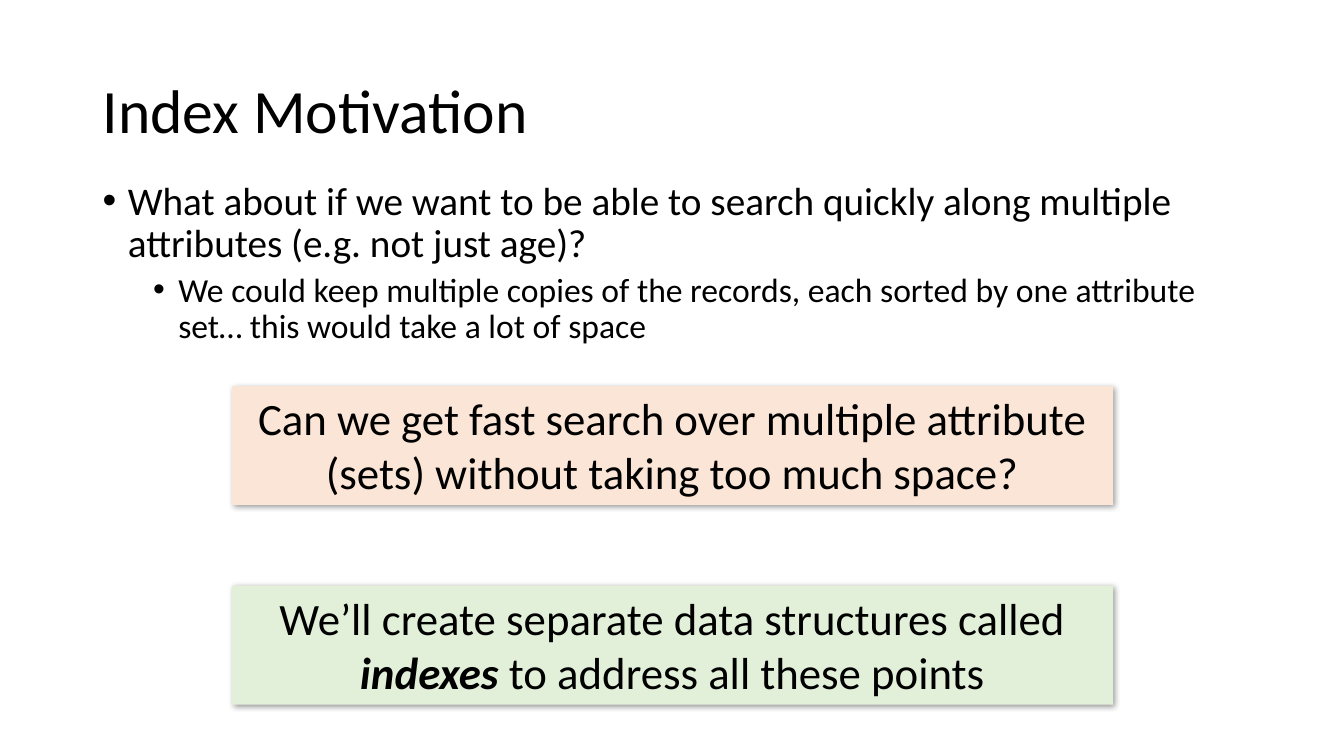
import pptx
import pptx.dml.color
import pptx.enum.shapes
import pptx.enum.text
import pptx.oxml
import pptx.oxml.ns
import pptx.util

Inches = pptx.util.Inches
Pt = pptx.util.Pt
RGBColor = pptx.dml.color.RGBColor
ALIGN = pptx.enum.text.PP_ALIGN
ANCHOR = pptx.enum.text.MSO_ANCHOR
qn = pptx.oxml.ns.qn

BLACK = RGBColor(0x00, 0x00, 0x00)
PEACH = RGBColor(0xFB, 0xE5, 0xD6)
MINT = RGBColor(0xE2, 0xF0, 0xD9)
FONT = "Calibri"

SHADOW_XML = (
    f'<a:outerShdw {pptx.oxml.ns.nsdecls("a")} blurRad="{Pt(4)}" dist="{Pt(1)}" '
    f'dir="{45 * 60000}" algn="tl" rotWithShape="0">'
    '<a:srgbClr val="000000"><a:alpha val="40000"/></a:srgbClr></a:outerShdw>'
)


def write(paragraph, text, size, emphasis=False):
    """Append one run to the paragraph; emphasis means bold italic."""
    run = paragraph.add_run()
    run.text = text
    run.font.name = FONT
    run.font.size = Pt(size)
    run.font.color.rgb = BLACK
    run.font.bold = run.font.italic = emphasis


class LectureSlide:
    LEFT, WIDTH = Inches(0.92), Inches(11.5)
    BOX_LEFT, BOX_WIDTH, BOX_HEIGHT = Inches(2.3), Inches(8.74), Inches(1.18)
    BULLET_STEP, HANGING = Inches(0.5), Inches(0.25)

    def __init__(self, deck):
        self.slide = deck.slides.add_slide(deck.slide_layouts[6])

    def text_frame(self, top, height, anchor):
        box = self.slide.shapes.add_textbox(self.LEFT, top, self.WIDTH, height)
        frame = box.text_frame
        frame.word_wrap = True
        frame.vertical_anchor = anchor
        return frame

    def title(self, text):
        heading = self.text_frame(Inches(0.4), Inches(1.45), ANCHOR.MIDDLE).paragraphs[0]
        heading.line_spacing = 0.9
        write(heading, text, size=44)

    def bullets(self, items):
        """Write (level, size, space before, text) items as a bulleted list."""
        frame = self.text_frame(Inches(1.75), Inches(4.16), ANCHOR.TOP)
        for number, (level, size, space_before, text) in enumerate(items):
            bullet = frame.add_paragraph() if number else frame.paragraphs[0]
            bullet.level = level
            bullet.line_spacing = 0.9
            bullet.space_before = Pt(space_before)
            properties = bullet._p.get_or_add_pPr()
            properties.set("marL", str(self.HANGING + level * self.BULLET_STEP))
            properties.set("indent", str(-self.HANGING))
            bullet_font = properties.makeelement(qn("a:buFont"), {"typeface": "Arial"})
            properties.append(bullet_font)
            properties.append(properties.makeelement(qn("a:buChar"), {"char": "•"}))
            write(bullet, text, size=size)

    def callout(self, top, fill, phrases):
        """Draw a shadowed box holding (text, emphasis) phrases."""
        box = self.slide.shapes.add_shape(
            pptx.enum.shapes.MSO_SHAPE.RECTANGLE,
            self.BOX_LEFT, top, self.BOX_WIDTH, self.BOX_HEIGHT)
        box.fill.solid()
        box.fill.fore_color.rgb = fill
        box.line.fill.background()
        box.shadow.inherit = False
        effects = box._element.spPr.find(qn("a:effectLst"))
        effects.append(pptx.oxml.parse_xml(SHADOW_XML))
        frame = box.text_frame
        frame.word_wrap = True
        frame.vertical_anchor = ANCHOR.TOP
        message = frame.paragraphs[0]
        message.alignment = ALIGN.CENTER
        for text, emphasis in phrases:
            write(message, text, size=32, emphasis=emphasis)


def main():
    deck = pptx.Presentation()
    deck.slide_width, deck.slide_height = Inches(13.33), Inches(7.5)
    motivation = LectureSlide(deck)
    motivation.title("Index Motivation")
    motivation.bullets([
        (0, 28, 10, "What about if we want to be able to search quickly along "
                    "multiple attributes (e.g. not just age)?"),
        (1, 24, 5, "We could keep multiple copies of the records, each sorted by "
                   "one attribute set… this would take a lot of space"),
    ])
    motivation.callout(Inches(3.83), PEACH, [
        ("Can we get fast search over multiple attribute (sets) "
         "without taking too much space?", False),
    ])
    motivation.callout(Inches(5.81), MINT, [
        ("We’ll create separate data structures called ", False),
        ("indexes ", True),
        ("to address all these points", False),
    ])
    deck.save("out.pptx")


if __name__ == "__main__":
    main()
